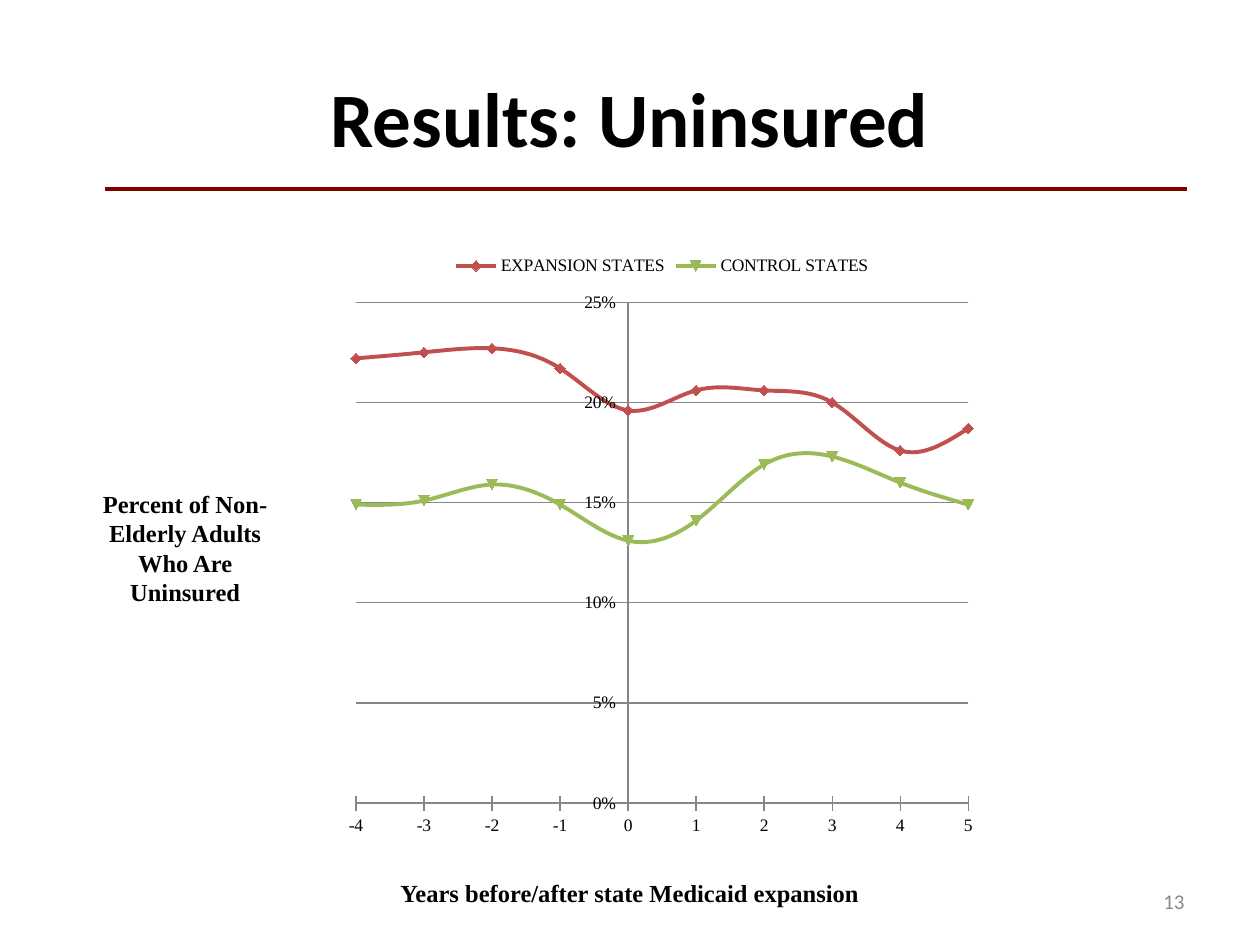
from lxml import etree
from pptx import Presentation
from pptx.chart.data import XyChartData
from pptx.dml.color import RGBColor
from pptx.enum.chart import XL_CHART_TYPE, XL_LEGEND_POSITION, XL_MARKER_STYLE, XL_TICK_MARK
from pptx.enum.shapes import MSO_CONNECTOR
from pptx.enum.text import MSO_ANCHOR, PP_ALIGN
from pptx.oxml import parse_xml
from pptx.oxml.ns import nsdecls, qn
from pptx.util import Inches, Pt

SCATTER = XL_CHART_TYPE.XY_SCATTER_SMOOTH
AUTO_MARKER = XL_MARKER_STYLE.AUTOMATIC
CROSS = XL_TICK_MARK.CROSS
LEFT, CENTER, RIGHT = PP_ALIGN.LEFT, PP_ALIGN.CENTER, PP_ALIGN.RIGHT
TOP, MIDDLE = MSO_ANCHOR.TOP, MSO_ANCHOR.MIDDLE
SANS, SERIF = "Calibri", "Times New Roman"
BLACK, GRAY, MAROON, AXIS_GRAY = "000000", "898989", "800000", "868686"

# Content
TITLE = "Results: Uninsured"
LABELS = [  # text, (left, top, width, height), size, font, colour, bold, align, anchor
    ("13", (7.17, 6.95, 2.33, 0.4), 12, SANS, GRAY, False, RIGHT, MIDDLE),
    ("Percent of Non-Elderly Adults Who Are Uninsured", (0.67, 3.83, 1.6, 1.04),
     14, SERIF, BLACK, True, CENTER, TOP),
    ("Years before/after state Medicaid expansion", (3.08, 6.92, 4.19, 0.34),
     14, SERIF, BLACK, True, LEFT, TOP),
]
YEARS = range(-4, 6)
SERIES = [
    ("EXPANSION STATES", "C0504D",
     [0.222, 0.225, 0.227, 0.217, 0.196, 0.206, 0.206, 0.2, 0.176, 0.187]),
    ("CONTROL STATES", "9BBB59",
     [0.149, 0.151, 0.159, 0.149, 0.131, 0.141, 0.169, 0.173, 0.16, 0.149]),
]
PLOT_AREA = {"x": 0.03, "y": 0.1, "w": 0.94, "h": 0.83}


def color(hex_value):
    return RGBColor.from_string(hex_value)


def format_font(font, size, name, hex_value, bold=False):
    font.size, font.name, font.bold = Pt(size), name, bold
    font.color.rgb = color(hex_value)


def format_line(line, hex_value, width):
    line.color.rgb = color(hex_value)
    line.width = Pt(width)


def format_axis(axis, low, high, step, number_format):
    axis.minimum_scale, axis.maximum_scale, axis.major_unit = low, high, step
    axis.major_tick_mark = CROSS
    axis.tick_labels.number_format = number_format
    axis.tick_labels.number_format_is_linked = False
    format_line(axis.format.line, AXIS_GRAY, 0.75)


def add_label(slide, text, box, size, font, hex_value, bold, align, anchor):
    frame = slide.shapes.add_textbox(*map(Inches, box)).text_frame
    frame.word_wrap = True
    frame.vertical_anchor = anchor
    paragraph = frame.paragraphs[0]
    paragraph.text = text
    paragraph.alignment = align
    format_font(paragraph.font, size, font, hex_value, bold)


def add_chart(slide):
    data = XyChartData()
    for name, _, values in SERIES:
        series = data.add_series(name)
        for year, value in zip(YEARS, values):
            series.add_data_point(year, value)
    box = map(Inches, (2.67, 1.92, 5.17, 4.79))
    chart = slide.shapes.add_chart(SCATTER, *box, data).chart
    chart.has_title = False
    format_font(chart.font, 10, SERIF, BLACK)
    chart.has_legend = True
    chart.legend.position = XL_LEGEND_POSITION.TOP
    chart.legend.include_in_layout = False

    # Axes
    format_axis(chart.category_axis, YEARS[0], YEARS[-1], 1, "General")
    format_axis(chart.value_axis, 0, 0.25, 0.05, "0%")
    chart.category_axis.has_major_gridlines = False
    chart.value_axis.has_major_gridlines = True
    format_line(chart.value_axis.major_gridlines.format.line, AXIS_GRAY, 0.75)

    # Series: automatic markers follow the index, which starts at 1
    plot = chart.plots[0]
    plot.vary_by_categories = False
    for index, (series, (_, hex_value, _)) in enumerate(zip(plot.series, SERIES), 1):
        format_line(series.format.line, hex_value, 2.25)
        series.marker.style = AUTO_MARKER
        series.marker.size = 6
        series.marker.format.fill.solid()
        series.marker.format.fill.fore_color.rgb = color(hex_value)
        format_line(series.marker.format.line, hex_value, 0.75)
        element = series._element
        element.find(qn("c:idx")).set("val", str(index))
        element.find(qn("c:smooth")).set("val", "1")

    # Inner plot area as fractions of the chart
    plot_area = chart._chartSpace.chart.plotArea
    for old_layout in plot_area.findall(qn("c:layout")):
        plot_area.remove(old_layout)
    layout = parse_xml(f"<c:layout {nsdecls('c')}><c:manualLayout/></c:layout>")
    settings = [("layoutTarget", "inner"), ("xMode", "edge"), ("yMode", "edge")]
    for tag, value in settings + list(PLOT_AREA.items()):
        etree.SubElement(layout[0], qn(f"c:{tag}")).set("val", str(value))
    plot_area.insert(0, layout)


def main():
    presentation = Presentation()
    presentation.slide_width, presentation.slide_height = Inches(10), Inches(7.5)
    slide = presentation.slides.add_slide(presentation.slide_layouts[5])

    # Title and rule
    title = slide.shapes.title
    title.left, title.top, title.width, title.height = map(Inches, (0, 0.3, 10, 1.25))
    title.text_frame.vertical_anchor = MIDDLE
    paragraph = title.text_frame.paragraphs[0]
    paragraph.text = TITLE
    paragraph.alignment = CENTER
    format_font(paragraph.font, 44, SANS, BLACK, True)
    rule = slide.shapes.add_connector(
        MSO_CONNECTOR.STRAIGHT, *map(Inches, (0.83, 1.5, 9.42, 1.5)))
    format_line(rule.line, MAROON, 2.25)
    etree.SubElement(rule._element.spPr, qn("a:effectLst"))

    # Labels and chart
    for label in LABELS:
        add_label(slide, *label)
    add_chart(slide)
    presentation.save("out.pptx")


if __name__ == "__main__":
    main()
